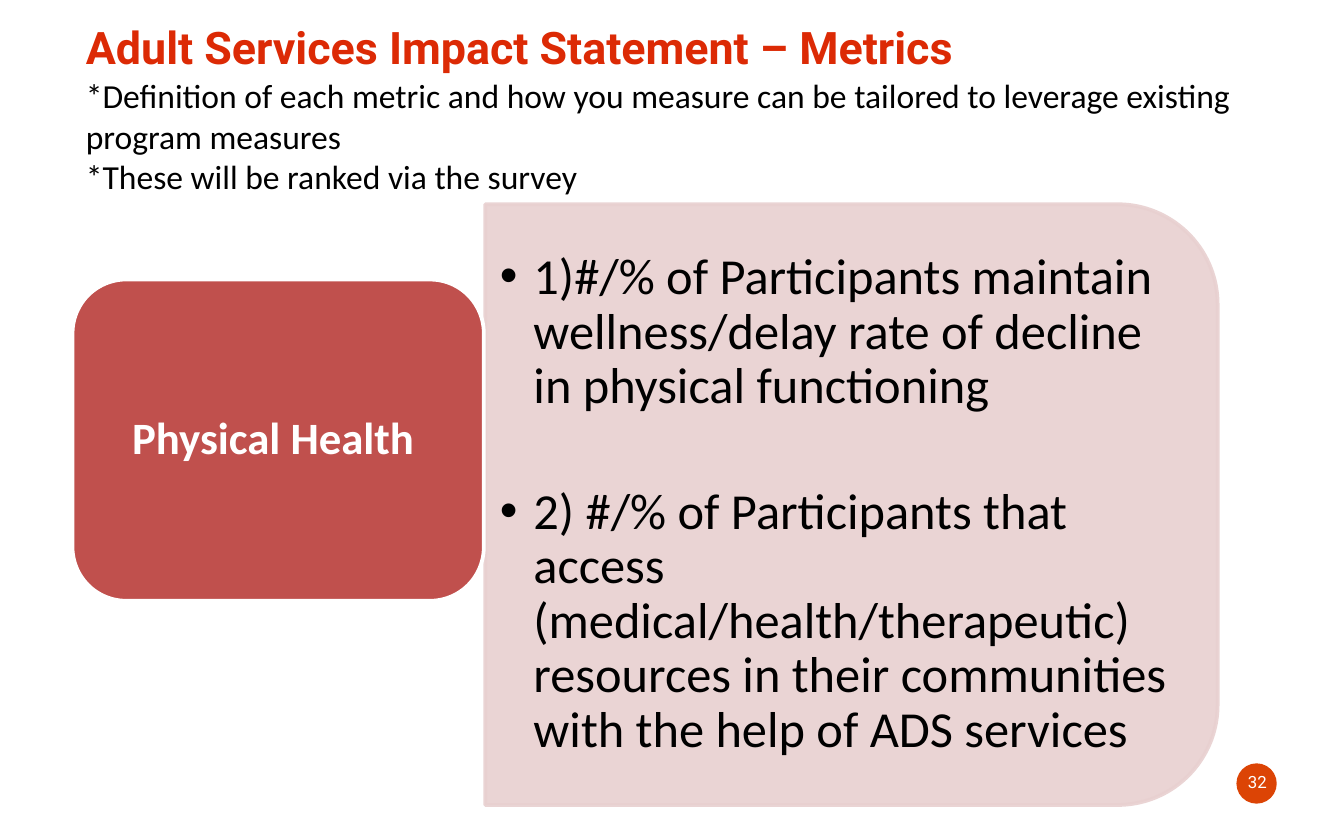
from lxml import etree
from pptx import Presentation
from pptx.dml.color import RGBColor
from pptx.enum import shapes, text
from pptx.oxml.ns import qn
from pptx.util import Inches, Pt

RED, PINK, ORANGE = "C0504D", "E8D0D0", "DC4405"
WHITE, BLACK, TITLE_RED = "FFFFFF", "000000", "DC2A05"
OPACITY = 90


def color(hex_string):
    return RGBColor.from_string(hex_string)


def set_opacity(fill_owner, percent):
    """Add an alpha value to the solid fill inside an XML element."""
    solid = fill_owner.find(qn("a:solidFill"))
    etree.SubElement(solid[0], qn("a:alpha"), val=str(percent * 1000))


def add_panel(slide, kind, box, fill, line=None):
    shape = slide.shapes.add_shape(kind, *map(Inches, box))
    shape.shadow.inherit = False
    shape.fill.solid()
    shape.fill.fore_color.rgb = color(fill)
    if line:
        shape.line.color.rgb = color(line)
        shape.line.width = Pt(2)
    else:
        shape.line.fill.background()
    return shape


def add_text(slide, box, lines, font, anchor=text.MSO_ANCHOR.TOP,
             insets=(0.1, 0.05), **paragraph_format):
    """Write one paragraph per line; font holds name, size, bold and hex colour."""
    text_box = slide.shapes.add_textbox(*map(Inches, box))
    frame = text_box.text_frame
    horizontal, vertical = map(Inches, insets)
    frame_format = dict(word_wrap=True, vertical_anchor=anchor,
                        margin_left=horizontal, margin_right=horizontal,
                        margin_top=vertical, margin_bottom=vertical)
    for name, value in frame_format.items():
        setattr(frame, name, value)
    for index, line in enumerate(lines):
        paragraph = frame.add_paragraph() if index else frame.paragraphs[0]
        for name, value in paragraph_format.items():
            setattr(paragraph, name, value)
        run = paragraph.add_run()
        run.text = line
        name, size, bold, hex_string = font
        for key, value in dict(name=name, size=Pt(size), bold=bold).items():
            setattr(run.font, key, value)
        run.font.color.rgb = color(hex_string)
    return frame


def add_bullet(paragraph, indent):
    properties = paragraph._p.get_or_add_pPr()
    properties.set("marL", str(Inches(indent)))
    properties.set("indent", str(-Inches(indent)))
    etree.SubElement(properties, qn("a:buFont"), typeface="Arial")
    etree.SubElement(properties, qn("a:buChar"), char="•")


def add_heading(slide, left, top, title, notes):
    add_text(slide, (left, top, 8.33, 0.5), [title],
             ("Roboto", 24, True, TITLE_RED))
    add_text(slide, (left, top + 0.41, 9.02, 1.01), notes,
             ("Calibri", 18, False, BLACK))


def add_metrics(slide, box, metrics):
    """Draw a panel rounded on its right side, with bulleted metrics."""
    left, top, width, height = box
    turned_box = (left + (width - height) / 2, top + (height - width) / 2,
                  height, width)
    panel = add_panel(slide, shapes.MSO_SHAPE.ROUND_2_SAME_RECTANGLE,
                      turned_box, PINK, PINK)
    panel.rotation = 90
    properties = panel._element.spPr
    for fill_owner in (properties, properties.find(qn("a:ln"))):
        set_opacity(fill_owner, OPACITY)
    frame = add_text(slide, (left, top + 0.22, width - 0.22, height - 0.44),
                     metrics, ("Calibri", 27, False, BLACK),
                     text.MSO_ANCHOR.MIDDLE, (0.11, 0.06), line_spacing=0.9)
    for paragraph in frame.paragraphs:
        add_bullet(paragraph, 0.25)
    for paragraph in frame.paragraphs[1:]:
        paragraph.space_before = Pt(38)


def add_category(slide, box, label):
    left, top, width, height = box
    pad = 0.12
    add_panel(slide, shapes.MSO_SHAPE.ROUNDED_RECTANGLE, box, RED, WHITE)
    add_text(slide, (left + pad, top + pad, width - 2 * pad, height - 2 * pad),
             [label], ("Calibri", 24, True, WHITE), text.MSO_ANCHOR.MIDDLE,
             (0.05, 0.03), alignment=text.PP_ALIGN.CENTER, line_spacing=0.9)


def add_page_number(slide, box, number):
    left, top, width, height = box
    add_panel(slide, shapes.MSO_SHAPE.OVAL, box, ORANGE)
    add_text(slide, (left - 0.14, top - 0.03, width + 0.29, height + 0.03),
             [number], ("Roboto", 9, False, WHITE), text.MSO_ANCHOR.MIDDLE,
             alignment=text.PP_ALIGN.CENTER)


def main():
    presentation = Presentation()
    presentation.slide_width = Inches(10)
    presentation.slide_height = Inches(6.25)
    slide = presentation.slides.add_slide(presentation.slide_layouts[6])
    add_page_number(slide, (9.2, 5.68, 0.3, 0.3), "32")
    add_metrics(slide, (3.61, 1.52, 5.45, 4.47), [
        "1)#/% of Participants maintain wellness/delay rate of decline "
        "in physical functioning",
        "2) #/% of Participants that access (medical/health/therapeutic) "
        "resources in their communities with the help of ADS services",
    ])
    add_category(slide, (0.54, 2.08, 3.06, 2.39), "Physical Health ")
    add_heading(slide, 0.54, 0.1, "Adult Services Impact Statement – Metrics", [
        "*Definition of each metric and how you measure can be tailored "
        "to leverage existing program measures",
        "*These will be ranked via the survey",
    ])
    presentation.save("out.pptx")


if __name__ == "__main__":
    main()
